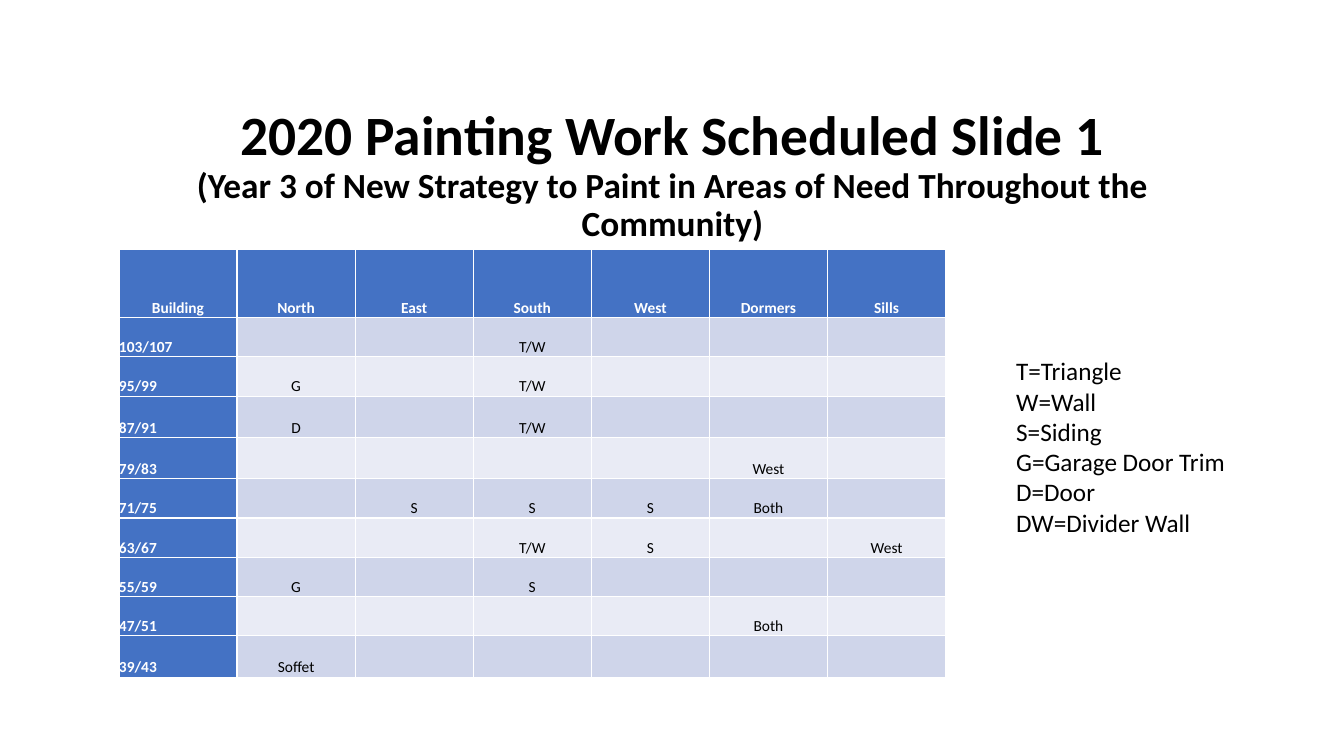
from copy import deepcopy
from dataclasses import dataclass

from pptx import Presentation
from pptx.dml.color import RGBColor
from pptx.enum.text import MSO_ANCHOR, MSO_AUTO_SIZE, PP_ALIGN
from pptx.oxml.ns import qn
from pptx.util import Inches, Pt

BLACK = RGBColor(0x00, 0x00, 0x00)
WHITE = RGBColor(0xFF, 0xFF, 0xFF)
BLUE = RGBColor(0x44, 0x72, 0xC4)
BAND_DARK = RGBColor(0xCF, 0xD5, 0xEA)
BAND_LIGHT = RGBColor(0xE9, 0xEB, 0xF5)

CELL_FORMAT = {
    "margin_left": 0,
    "margin_top": 0,
    "margin_right": 0,
    "margin_bottom": 0,
    "vertical_anchor": MSO_ANCHOR.BOTTOM,
}


@dataclass(frozen=True)
class TextStyle:
    size: float
    color: RGBColor = BLACK
    bold: bool = False


@dataclass(frozen=True)
class Building:
    number: str
    work: dict[str, str]
    height: float = 0.39


HEADING = TextStyle(39.6, bold=True)
SUBHEADING = TextStyle(25.2, bold=True)
LABEL = TextStyle(11, WHITE, True)
ENTRY = TextStyle(11)
KEY = TextStyle(18)

COLUMNS = ["Building", "North", "East", "South", "West", "Dormers", "Sills"]
HEADER_HEIGHT = 0.68
BUILDINGS = [
    Building("103/107", {"South": "T/W"}),
    Building("95/99", {"North": "G", "South": "T/W"}),
    Building("87/91", {"North": "D", "South": "T/W"}, 0.41),
    Building("79/83", {"Dormers": "West"}, 0.41),
    Building("71/75", {"East": "S", "South": "S", "West": "S", "Dormers": "Both"}),
    Building("63/67", {"South": "T/W", "West": "S", "Sills": "West"}),
    Building("55/59", {"North": "G", "South": "S"}),
    Building("47/51", {"Dormers": "Both"}),
    Building("39/43", {"North": "Soffet"}, 0.41),
]
WORK_KEY = [
    "T=Triangle",
    "W=Wall",
    "S=Siding",
    "G=Garage Door Trim",
    "D=Door",
    "DW=Divider Wall",
]


def add_run(p, text: str, style: TextStyle):
    r = p.add_run()
    r.text = text
    font = {"name": "Calibri", "size": Pt(style.size), "bold": style.bold}
    for name, value in font.items():
        setattr(r.font, name, value)
    r.font.color.rgb = style.color
    return r


def place(sp, left: float, top: float, width: float, height: float) -> None:
    box = {"left": left, "top": top, "width": width, "height": height}
    for name, value in box.items():
        setattr(sp, name, Inches(value))


def fill_title(sp) -> None:
    place(sp, 0.92, 1.02, 11.5, 1.45)
    tf = sp.text_frame
    tf.word_wrap = True
    tf.auto_size = MSO_AUTO_SIZE.NONE
    tf.vertical_anchor = MSO_ANCHOR.MIDDLE
    p = tf.paragraphs[0]
    p.alignment = PP_ALIGN.CENTER
    p.line_spacing = 0.9
    r = add_run(p, "2020 Painting Work Scheduled Slide 1", HEADING)
    p.add_line_break()
    # The break takes the heading's size so that it does not stretch the line.
    p._p.find(qn("a:br")).append(deepcopy(r._r.rPr))
    add_run(
        p,
        "(Year 3 of New Strategy to Paint in Areas of Need Throughout the Community)",
        SUBHEADING,
    )


def format_cell(cell, text: str, fill: RGBColor, style: TextStyle, align) -> None:
    for name, value in CELL_FORMAT.items():
        setattr(cell, name, value)
    cell.fill.solid()
    cell.fill.fore_color.rgb = fill
    p = cell.text_frame.paragraphs[0]
    p.alignment = align
    if text:
        add_run(p, text, style)


def add_schedule(slide) -> None:
    heights = [HEADER_HEIGHT] + [b.height for b in BUILDINGS]
    frame = slide.shapes.add_table(
        len(heights), len(COLUMNS),
        Inches(1.18), Inches(2.47), Inches(8.2), Inches(sum(heights)),
    )
    table = frame.table
    table.first_col = True
    for row, height in zip(table.rows, heights):
        row.height = Inches(height)
    for col, heading in enumerate(COLUMNS):
        format_cell(table.cell(0, col), heading, BLUE, LABEL, PP_ALIGN.CENTER)
    for row, building in enumerate(BUILDINGS, start=1):
        band = BAND_DARK if row % 2 else BAND_LIGHT
        format_cell(table.cell(row, 0), building.number, BLUE, LABEL, PP_ALIGN.LEFT)
        for col, side in enumerate(COLUMNS[1:], start=1):
            text = building.work.get(side, "")
            format_cell(table.cell(row, col), text, band, ENTRY, PP_ALIGN.CENTER)


def add_work_key(slide) -> None:
    sp = slide.shapes.add_textbox(
        Inches(9.98), Inches(3.48), Inches(2.82), Inches(2.22)
    )
    tf = sp.text_frame
    tf.word_wrap = True
    tf.auto_size = MSO_AUTO_SIZE.SHAPE_TO_FIT_TEXT
    for i, entry in enumerate(WORK_KEY):
        p = tf.add_paragraph() if i else tf.paragraphs[0]
        add_run(p, entry, KEY)


def main() -> None:
    prs = Presentation()
    prs.slide_width = Inches(13.33)
    prs.slide_height = Inches(7.5)
    slide = prs.slides.add_slide(prs.slide_layouts[5])
    fill_title(slide.shapes.title)
    add_schedule(slide)
    add_work_key(slide)
    prs.save("out.pptx")


if __name__ == "__main__":
    main()
